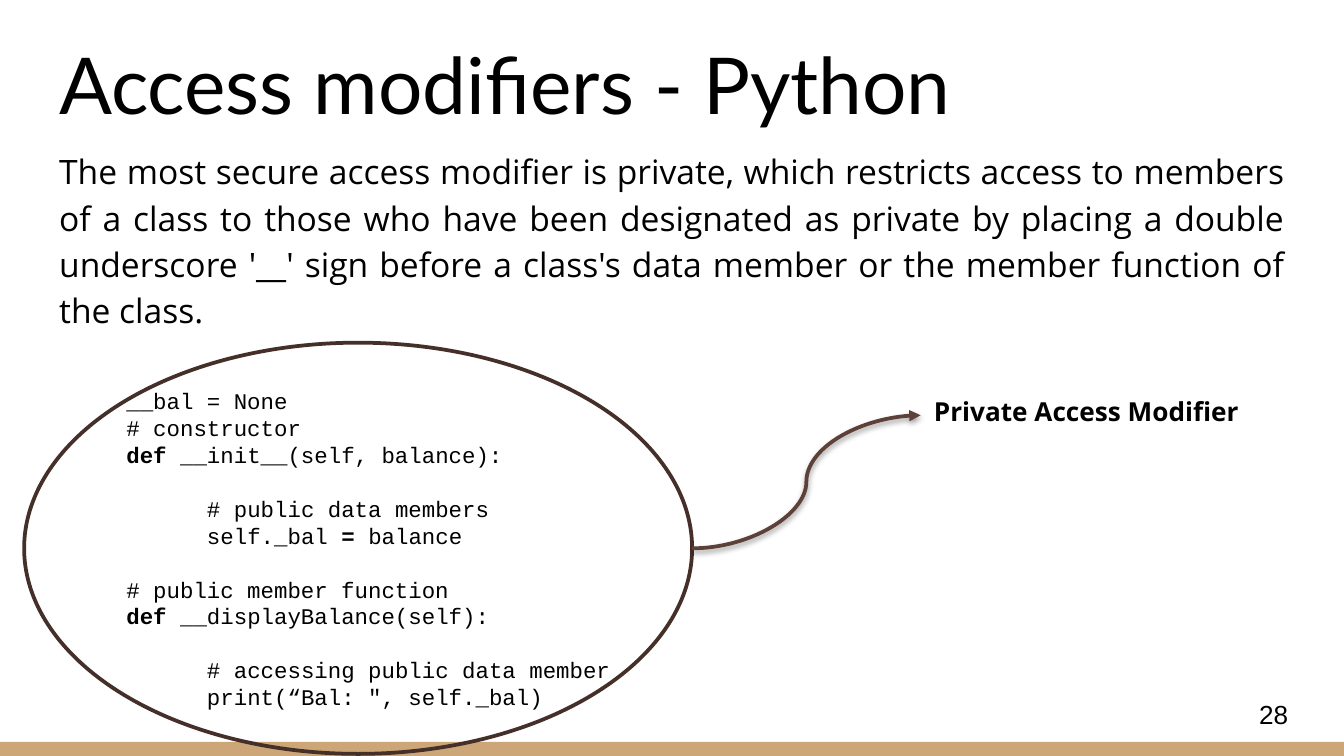
from lxml import etree
from pptx import Presentation
from pptx.dml.color import RGBColor
from pptx.enum.shapes import MSO_CONNECTOR, MSO_SHAPE
from pptx.enum.text import MSO_ANCHOR, MSO_AUTO_SIZE, PP_ALIGN
from pptx.oxml import parse_xml
from pptx.oxml.ns import nsdecls, qn
from pptx.util import Inches, Pt

CURVE = MSO_CONNECTOR.CURVE
RECT, OVAL = MSO_SHAPE.RECTANGLE, MSO_SHAPE.OVAL
TOP, MID, LOW = MSO_ANCHOR.TOP, MSO_ANCHOR.MIDDLE, MSO_ANCHOR.BOTTOM
LEFT, JUST = PP_ALIGN.LEFT, PP_ALIGN.JUSTIFY
FIXED = MSO_AUTO_SIZE.NONE

WIDE = 10
HIGH = WIDE * 9 / 16
EDGE = 0.34
SPAN = WIDE - 2 * EDGE
STEP = 14.4  # code line height in points

COLORS = {"ink": "000000", "bar": "CCA677", "ring": "452F29", "arrow": "5D4037"}
FONTS = {
    "title": {"name": "Lato", "size": Pt(42), "bold": False},
    "intro": {"name": "Open Sans", "size": Pt(18), "bold": False},
    "code": {"name": "Courier New", "size": Pt(12), "bold": False},
    "page": {"name": "Arial", "size": Pt(14), "bold": False},
    "label": {"name": "Open Sans", "size": Pt(14), "bold": True},
}
INTRO = (
    "The most secure access modifier is private, which restricts access to "
    "members of a class to those who have been designated as private by placing "
    "a double underscore '__' sign before a class's data member or the member "
    "function of the class."
)
# Each line: indent level, lines skipped above, runs (odd ones are bold)
CODE = [
    (0, 0, ["__bal = None"]),
    (0, 0, ["# constructor"]),
    (0, 0, ["", "def", " __init__(self, balance):"]),
    (1, 1, ["# public data members"]),
    (1, 0, ["self._bal ", "=", " balance"]),
    (0, 1, ["# public member function"]),
    (0, 0, ["", "def", " __displayBalance(self):"]),
    (1, 1, ["# accessing public data member"]),
    (1, 0, ["print(“Bal: \", self._bal)"]),
]


def color(key):
    return RGBColor.from_string(COLORS[key])


def apply(item, values):
    for name, value in values.items():
        setattr(item, name, value)


def place(shape, left, top, width, height):
    apply(shape, {"left": Inches(left), "top": Inches(top),
                  "width": Inches(width), "height": Inches(height)})


def frame(shape, anchor, pad=0.1):
    text = shape.text_frame
    apply(text, {"word_wrap": True, "auto_size": FIXED, "vertical_anchor": anchor})
    apply(text, dict.fromkeys(("margin_left", "margin_right"), Inches(0.1)))
    apply(text, dict.fromkeys(("margin_top", "margin_bottom"), Inches(pad)))
    return text


def write(para, parts, style, align=LEFT, **gaps):
    apply(para, {"alignment": align, **gaps})
    for index, part in enumerate(parts):
        if part:
            run = para.add_run()
            run.text = part
            apply(run.font, FONTS[style])
            run.font.color.rgb = color("ink")
            if index % 2:
                run.font.bold = True


def indent(para, inches):
    props = para._p.get_or_add_pPr()
    props.set("marL", str(Inches(inches)))
    props.set("indent", "0")
    etree.SubElement(props, qn("a:buNone"))


def add_body(shape):
    text = frame(shape, TOP)
    first = text.paragraphs[0]
    write(first, [INTRO], "intro", JUST, line_spacing=Pt(24.8),
          space_before=Pt(0), space_after=Pt(30.6))
    indent(first, 0)
    for level, skip, parts in CODE:
        para = text.add_paragraph()
        write(para, parts, "code", JUST, line_spacing=Pt(STEP),
              space_before=Pt(skip * STEP), space_after=Pt(0))
        indent(para, 0.5 + 0.6 * level)


def add_note(slide, words, style, box, anchor, pad):
    shape = slide.shapes.add_textbox(0, 0, 0, 0)
    place(shape, *box)
    write(frame(shape, anchor, pad).paragraphs[0], [words], style)


def add_form(slide, kind, box, fill=None, line=None):
    shape = slide.shapes.add_shape(kind, 0, 0, 0, 0)
    place(shape, *box)
    shape.shadow.inherit = False
    if fill:
        shape.fill.solid()
        shape.fill.fore_color.rgb = color(fill)
    else:
        shape.fill.background()
    if line:
        shape.line.color.rgb = color(line)
        shape.line.width = Pt(2)
    else:
        shape.line.fill.background()


def add_arrow(slide, start, end):
    arrow = slide.shapes.add_connector(CURVE, *map(Inches, start + end))
    arrow.line.color.rgb = color("arrow")
    arrow.line.width = Pt(2)
    etree.SubElement(arrow.line._get_or_add_ln(), qn("a:tailEnd"), type="triangle")
    arrow._element.spPr.append(parse_xml(
        f'<a:effectLst {nsdecls("a")}><a:outerShdw blurRad="{Pt(3.1)}" '
        f'dist="{Pt(1.6)}" dir="5400000" rotWithShape="0">'
        f'<a:srgbClr val="{COLORS["ink"]}"><a:alpha val="38000"/></a:srgbClr>'
        '</a:outerShdw></a:effectLst>'))


def main():
    deck = Presentation()
    deck.slide_width, deck.slide_height = Inches(WIDE), Inches(HIGH)
    slide = deck.slides.add_slide(deck.slide_layouts[1])
    title, body = slide.placeholders

    # Title and text
    place(title, EDGE, 0.16, SPAN, 0.91)
    write(frame(title, LOW).paragraphs[0], ["Access modifiers - Python"], "title")
    place(body, EDGE, 0.98, SPAN, 3.67)
    add_body(body)

    # Footer bar and page number
    add_form(slide, RECT, (0, 5.52, WIDE, HIGH - 5.52), fill="bar")
    add_note(slide, "28", "page", (9.27, 5.1, 0.6, 0.43), MID, 0.1)

    # Ring around the code, with its label
    add_form(slide, OVAL, (0.18, 2.55, 4.97, 3.06), line="ring")
    add_arrow(slide, (5.15, 4.08), (6.85, 3.09))
    add_note(slide, "Private Access Modifier", "label",
             (6.85, 2.89, 2.81, 0.57), TOP, 0.05)

    deck.save("out.pptx")


if __name__ == "__main__":
    main()
